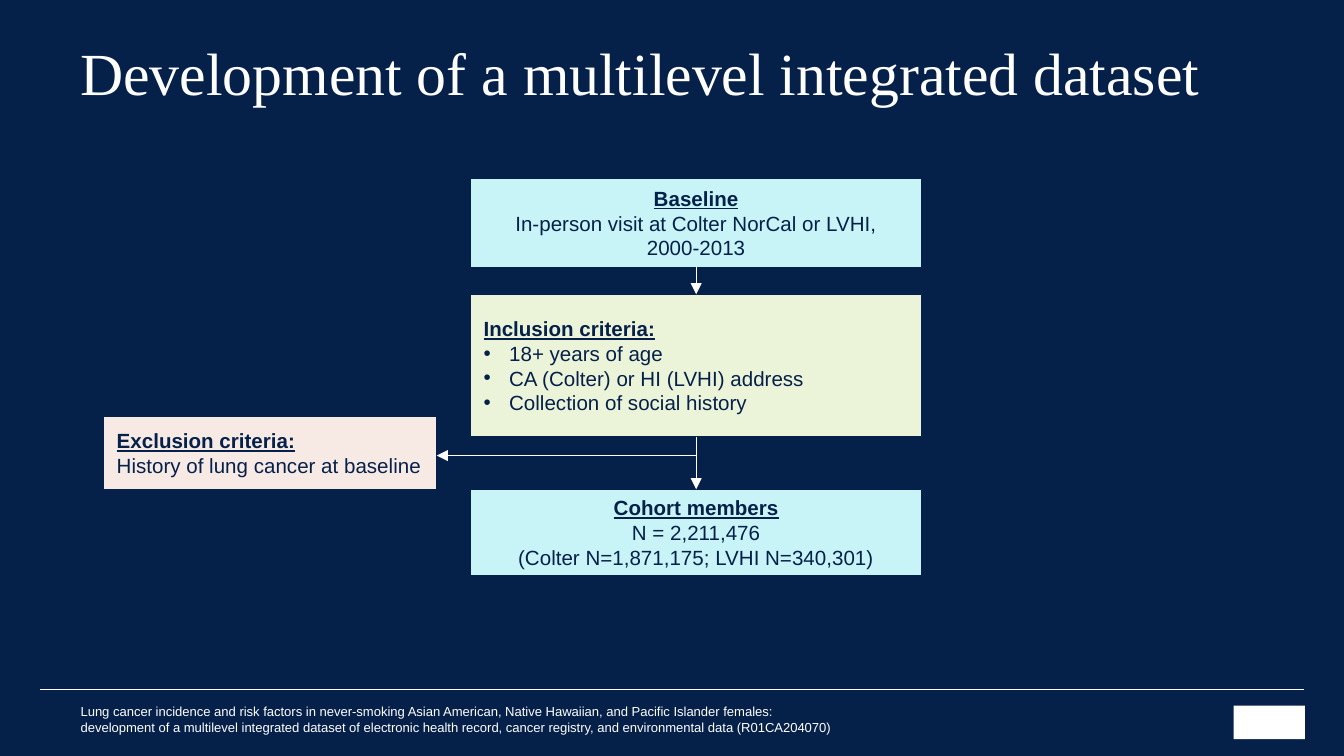
from dataclasses import dataclass

from lxml import etree
from pptx import Presentation
from pptx import util as u
from pptx.dml.color import RGBColor
from pptx.enum import shapes, text
from pptx.oxml.ns import qn


@dataclass(frozen=True)
class Theme:
    navy: str = "052049"
    white: str = "FFFFFF"
    aqua: str = "C8F4F7"
    lime: str = "EBF3D8"
    rose: str = "F7E9E4"
    serif: str = "Times New Roman"
    sans: str = "Arial"
    title: float = 32
    body: float = 11
    note: float = 7


THEME = Theme()
LEFT = text.PP_ALIGN.LEFT
CENTER = text.PP_ALIGN.CENTER


def tint(name):
    return RGBColor.from_string(name)


def style(para, size, face, color, bold=False):
    font = para.font
    font.size, font.name = u.Pt(size), face
    font.color.rgb = tint(color)
    font.bold = font.underline = bold


def bullet(para):
    props = para._p.get_or_add_pPr()
    props.set("marL", str(u.Inches(0.19)))
    props.set("indent", str(u.Inches(-0.19)))
    face = etree.Element(qn("a:buFont"), typeface=THEME.sans)
    mark = etree.Element(qn("a:buChar"), char="•")
    props.insert_element_before(face, "a:defRPr")
    props.insert_element_before(mark, "a:defRPr")


def add_rect(slide, box, fill):
    rect = slide.shapes.add_shape(
        shapes.MSO_SHAPE.RECTANGLE, *map(u.Inches, box))
    rect.shadow.inherit = False
    rect.fill.solid()
    rect.fill.fore_color.rgb = tint(fill)
    rect.line.color.rgb = tint(THEME.navy)
    rect.line.width = u.Pt(0.5)
    return rect


def add_line(slide, start, end, width, arrow=False):
    line = slide.shapes.add_connector(
        shapes.MSO_CONNECTOR.STRAIGHT, *map(u.Inches, start + end))
    line.line.color.rgb = tint(THEME.white)
    line.line.width = u.Pt(width)
    if arrow:
        tail = etree.SubElement(line.line._get_or_add_ln(), qn("a:tailEnd"))
        tail.set("type", "triangle")
    etree.SubElement(line._element.spPr, qn("a:effectLst"))


def add_text(slide, box, words, size, face, inset=None, space=None):
    frame = slide.shapes.add_textbox(*map(u.Inches, box)).text_frame
    frame.word_wrap = True
    frame.vertical_anchor = text.MSO_ANCHOR.BOTTOM
    if inset is not None:
        frame.margin_left = frame.margin_right = u.Inches(inset)
        frame.margin_top = frame.margin_bottom = u.Inches(inset)
    para = frame.paragraphs[0]
    para.text = words
    para.line_spacing = space
    style(para, size, face, THEME.white)


def add_card(slide, box, fill, head, lines, align=LEFT, dots=False):
    frame = add_rect(slide, box, fill).text_frame
    frame.word_wrap = True
    frame.vertical_anchor = text.MSO_ANCHOR.MIDDLE
    for i, words in enumerate([head, *lines]):
        para = frame.add_paragraph() if i else frame.paragraphs[0]
        para.text = words
        para.alignment = align
        style(para, THEME.body, THEME.sans, THEME.navy, bold=i == 0)
        if dots and i:
            bullet(para)


def add_flow(slide, box):
    left, top, width, height = box
    wide, side = 3.36, 2.48
    main = left + width - wide
    mid = main + wide / 2
    base, rule = top + 0.66, top + 0.86
    end, last = top + 1.92, top + 2.31
    fork = top + 2.06

    add_card(slide, (main, rule, wide, end - rule), THEME.lime,
             "Inclusion criteria:",
             ["18+ years of age", "CA (Colter) or HI (LVHI) address",
              "Collection of social history"], dots=True)
    add_card(slide, (main, top, wide, base - top), THEME.aqua, "Baseline",
             ["In-person visit at Colter NorCal or LVHI,", "2000-2013"], CENTER)
    add_card(slide, (left, top + 1.77, side, 0.54), THEME.rose,
             "Exclusion criteria:", ["History of lung cancer at baseline"])
    add_line(slide, (mid, base), (mid, rule), 0.5, arrow=True)
    add_card(slide, (main, last, wide, top + height - last), THEME.aqua,
             "Cohort members",
             ["N = 2,211,476", "(Colter N=1,871,175; LVHI N=340,301)"], CENTER)
    add_line(slide, (mid, end), (mid, last), 0.5, arrow=True)
    add_line(slide, (mid, fork), (left + side, fork), 0.75, arrow=True)


def add_footer(slide, box):
    left, top, width, height = box
    add_line(slide, (left, top), (left + width, top), 0.25)
    mark = add_rect(slide, (left + width - 0.52, top + 0.12, 0.53, 0.25),
                    THEME.white)
    mark.line.fill.background()
    add_text(slide, (left + 0.3, top + 0.23, 5.67, height - 0.23),
             "Lung cancer incidence and risk factors in never-smoking Asian "
             "American, Native Hawaiian, and Pacific Islander females: "
             "development of a multilevel integrated dataset of electronic "
             "health record, cancer registry, and environmental data "
             "(R01CA204070)", THEME.note, THEME.sans, inset=0)


def main():
    deck = Presentation()
    deck.slide_width = u.Inches(10)
    deck.slide_height = deck.slide_width * 9 // 16
    slide = deck.slides.add_slide(deck.slide_layouts[6])
    slide.background.fill.solid()
    slide.background.fill.fore_color.rgb = tint(THEME.navy)
    add_text(slide, (0.5, 0.35, 8.94, 0.5),
             "Development of a multilevel integrated dataset",
             THEME.title, THEME.serif, space=0.85)
    add_flow(slide, (0.77, 1.33, 6.09, 2.95))
    add_footer(slide, (0.3, 5.13, 9.4, 0.34))
    deck.save("out.pptx")


if __name__ == "__main__":
    main()
